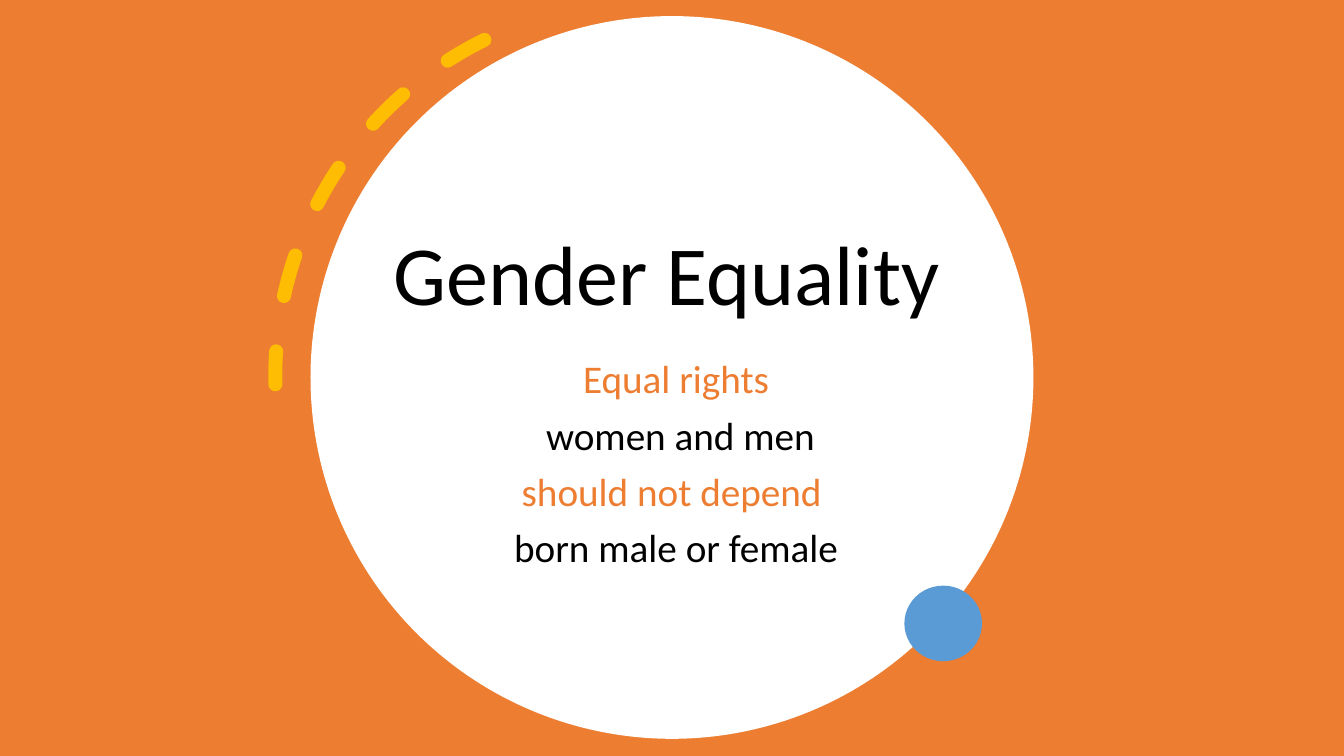
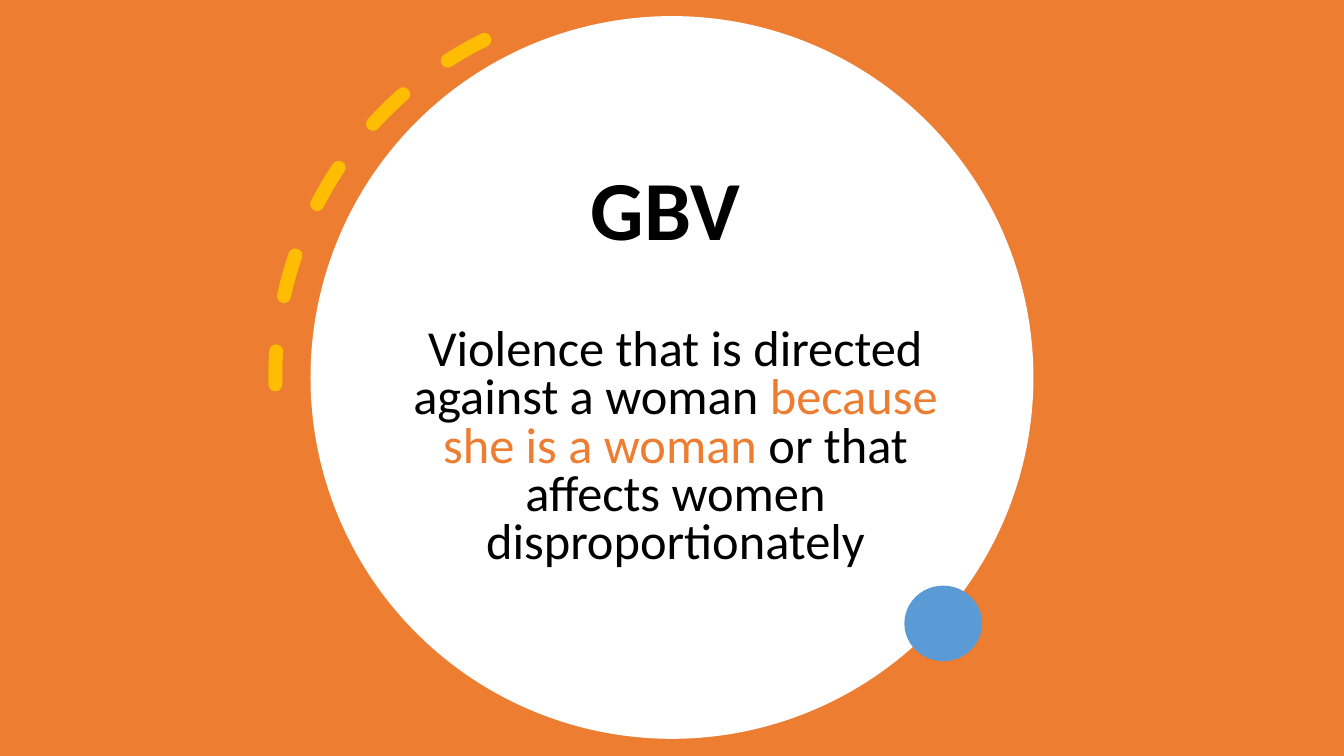
from lxml.etree import SubElement
from pptx import Presentation
from pptx.dml.color import RGBColor
from pptx.enum.dml import MSO_LINE
from pptx.enum.shapes import MSO_SHAPE
from pptx.enum.text import MSO_ANCHOR, MSO_AUTO_SIZE, PP_ALIGN
from pptx.oxml.ns import qn
from pptx.util import Inches, Pt

ORANGE = RGBColor(0xED, 0x7D, 0x31)
WHITE = RGBColor(0xFF, 0xFF, 0xFF)
BLACK = RGBColor(0x00, 0x00, 0x00)
GOLD = RGBColor(0xFF, 0xC0, 0x00)
BLUE = RGBColor(0x5B, 0x9B, 0xD5)
FONT = "Calibri"

DISC = (3.08, 0.16, 7.17, 7.17)


def add_disc(s, box, color):
    disc = s.shapes.add_shape(MSO_SHAPE.OVAL, *map(Inches, box))
    disc.shadow.inherit = False
    disc.fill.solid()
    disc.fill.fore_color.rgb = color
    disc.line.fill.background()
    return disc


def add_dashed_arc(s, box):
    arc = s.shapes.add_shape(MSO_SHAPE.ARC, *map(Inches, box))
    arc.shadow.inherit = False
    arc.adjustments[0], arc.adjustments[1] = 162, 200.93
    arc.rotation = 153.7
    arc.fill.background()
    arc.line.color.rgb = GOLD
    arc.line.width = Pt(10)
    arc.line.dash_style = MSO_LINE.DASH
    # Mirrored, with round caps and slight transparency
    arc.element.spPr.find(qn("a:xfrm")).set("flipV", "1")
    ln = arc.element.spPr.find(qn("a:ln"))
    ln.set("cap", "rnd")
    SubElement(ln.find(".//" + qn("a:srgbClr")), qn("a:alpha"), val="95000")


def add_frame(s, box):
    """Orange ground with the white disc, dashed arc and blue dot around box."""
    left, top, width, height = box
    s.background.fill.solid()
    s.background.fill.fore_color.rgb = ORANGE
    disc = add_disc(s, box, WHITE)
    s.shapes.element.insert(2, disc.element)  # behind the placeholders
    add_dashed_arc(s, (left - 0.35, top - 0.15, width + 0.28, height + 0.28))
    add_disc(s, (left + 5.89, top + 5.65, 0.77, 0.75), BLUE)


def set_text(ph, box, paragraphs, size, bold=False, spacing=0.9, before=0,
             anchor=MSO_ANCHOR.TOP):
    """Fill a placeholder; each paragraph is a list of (text, color) runs."""
    ph.left, ph.top, ph.width, ph.height = map(Inches, box)
    tf = ph.text_frame
    tf.word_wrap = True
    tf.auto_size = MSO_AUTO_SIZE.NONE
    tf.vertical_anchor = anchor
    for i, runs in enumerate(paragraphs):
        p = tf.add_paragraph() if i else tf.paragraphs[0]
        p.alignment = PP_ALIGN.CENTER
        p.line_spacing = spacing
        p.space_before = Pt(before if i else 0)
        for text, color in runs:
            r = p.add_run()
            r.text = text
            r.font.name = FONT
            r.font.size = Pt(size)
            r.font.bold = bold
            r.font.color.rgb = color


def add_circle_slide(prs, title, title_box, body, body_box, body_size,
                     bold=False, spacing=0.9):
    s = prs.slides.add_slide(prs.slide_layouts[0])
    add_frame(s, DISC)
    set_text(s.shapes.title, title_box, [[(title, BLACK)]], 60, bold=bold,
             anchor=MSO_ANCHOR.BOTTOM)
    set_text(s.placeholders[1], body_box, body, body_size, spacing=spacing,
             before=10)


def main():
    prs = Presentation()
    prs.slide_width, prs.slide_height = Inches(13.33), Inches(7.5)

    # Gender equality
    add_circle_slide(
        prs, "Gender Equality", (3.57, 0.51, 6.08, 2.75),
        [[("Equal rights", ORANGE)],
         [(" women and men", BLACK)],
         [("should not depend ", ORANGE)],
         [("born male or female", BLACK)]],
        (3.67, 3.52, 6.07, 2.28), 28)

    # Definition of GBV
    add_circle_slide(
        prs, "GBV", (3.56, -0.13, 6.08, 2.75),
        [[("Violence that is directed against a woman ", BLACK),
          ("because she is a woman", ORANGE),
          (" or that affects women disproportionately", BLACK)]],
        (3.66, 3.2, 6.08, 2.7), 36, bold=True, spacing=0.8)

    prs.save("out.pptx")


if __name__ == "__main__":
    main()
